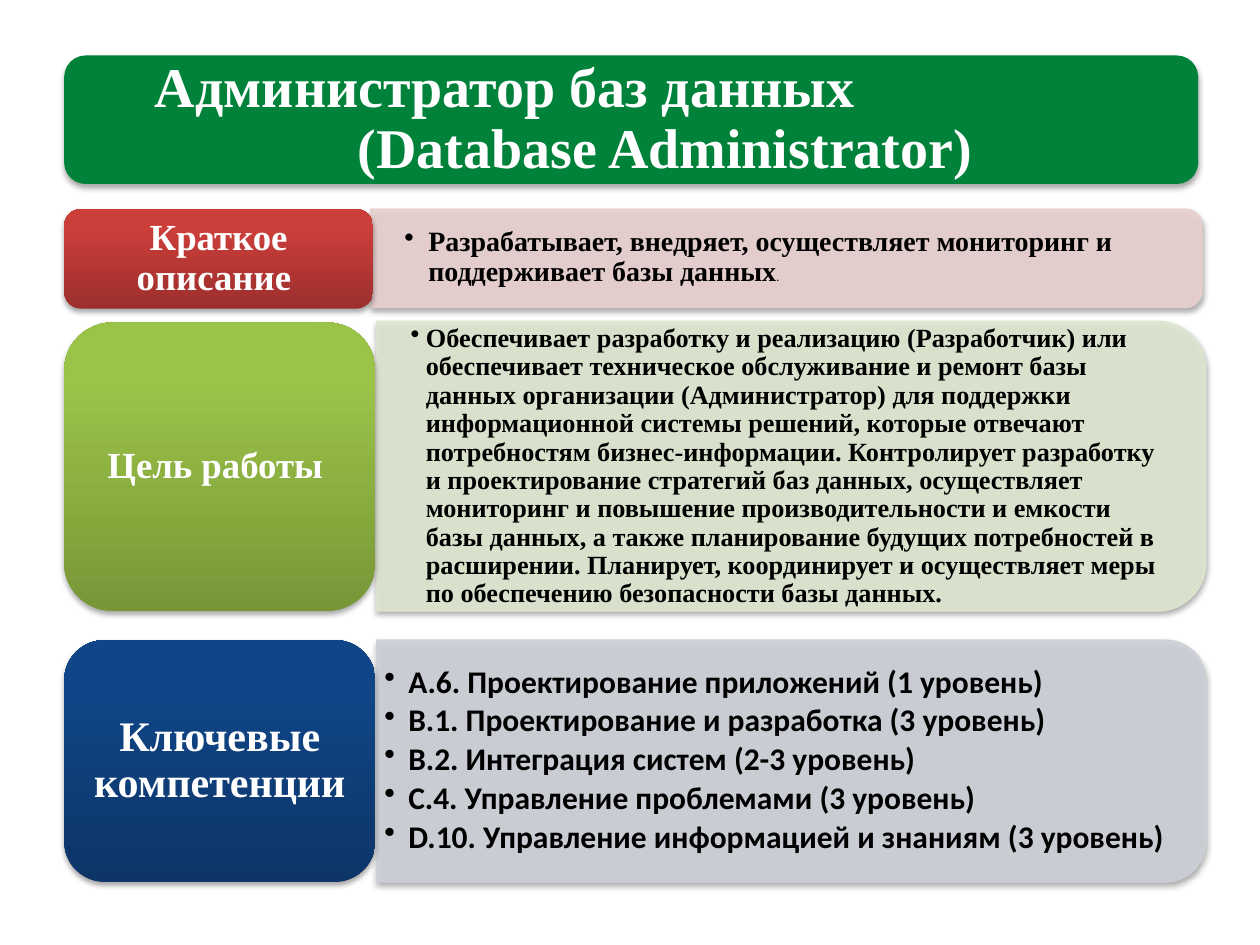
from lxml import etree
from pptx import Presentation
from pptx.dml.color import RGBColor
from pptx.enum.shapes import MSO_SHAPE
from pptx.enum.text import MSO_ANCHOR, MSO_AUTO_SIZE, PP_ALIGN
from pptx.oxml.ns import qn
from pptx.util import Inches, Pt

COLORS = {"banner": "00823B", "white": "FFFFFF", "black": "000000"}
SERIF, SANS = "Times New Roman", "Calibri"

# Each row: label and panel boxes (left, top, width, height), their colours and text
ROWS = [
    {"label": "Краткое описание ", "label_size": 21,
     "label_box": (0.51, 1.66, 2.45, 0.79), "gradient": ("9C2F2D", "CB3E3A"),
     "panel_box": (2.94, 1.66, 6.6, 0.78), "panel": "E8D0D0",
     "text_box": (2.94, 1.69, 6.56, 0.71), "inset": (0.27, 0.14),
     "font": SERIF, "size": 16, "hang": 0.19,
     "items": ["Разрабатывает, внедряет, осуществляет мониторинг и "
               "поддерживает базы данных"]},
    {"label": "Цель работы ", "label_size": 21,
     "label_box": (0.51, 2.56, 2.47, 2.29), "gradient": ("779737", "9BC348"),
     "panel_box": (2.99, 2.55, 6.58, 2.3), "panel": "DEE7D1",
     "text_box": (2.99, 2.67, 6.47, 2.07), "inset": (0.27, 0.14),
     "font": SERIF, "size": 15, "hang": 0.12,
     "items": ["Обеспечивает разработку и реализацию (Разработчик) или "
               "обеспечивает техническое обслуживание и ремонт базы данных "
               "организации (Администратор) для поддержки информационной "
               "системы решений, которые отвечают потребностям "
               "бизнес-информации. Контролирует разработку и проектирование "
               "стратегий баз данных, осуществляет мониторинг и повышение "
               "производительности и емкости базы данных, а также "
               "планирование будущих потребностей в расширении. Планирует, "
               "координирует и осуществляет меры по обеспечению безопасности "
               "базы данных."]},
    {"label": "Ключевые компетенции", "label_size": 24,
     "label_box": (0.51, 5.08, 2.47, 1.92), "gradient": ("0D3568", "104587"),
     "panel_box": (2.99, 5.08, 6.58, 1.92), "panel": "CDD0D7",
     "text_box": (2.98, 5.17, 6.49, 1.73), "inset": (0.07, 0.04),
     "font": SANS, "size": 18, "hang": 0.19,
     "items": ["А.6. Проектирование приложений (1 уровень)",
               "В.1. Проектирование и разработка (3 уровень)",
               "В.2. Интеграция систем (2-3 уровень)",
               "С.4. Управление проблемами (3 уровень)",
               "D.10. Управление информацией и знаниям (3 уровень)"]},
]


def add_shadow(sp):
    """Give a shape, already filled and outlined, a soft shadow below it."""
    sp.shadow.inherit = False
    effects = sp._element.spPr.find(qn("a:effectLst"))
    shadow = etree.SubElement(effects, qn("a:outerShdw"), blurRad="40000",
                              dist="23000", dir="5400000", rotWithShape="0")
    color = etree.SubElement(shadow, qn("a:srgbClr"), val=COLORS["black"])
    etree.SubElement(color, qn("a:alpha"), val="35000")


def format_text(tf, inset, font, size, color, align):
    tf.word_wrap = True
    tf.auto_size = MSO_AUTO_SIZE.NONE
    tf.vertical_anchor = MSO_ANCHOR.MIDDLE
    tf.margin_left = tf.margin_right = Inches(inset[0])
    tf.margin_top = tf.margin_bottom = Inches(inset[1])
    for p in tf.paragraphs:
        p.alignment = align
        p.line_spacing = 0.9
        p.space_before = Pt(0)
        for r in p.runs:
            r.font.name, r.font.size, r.font.bold = font, Pt(size), True
            r.font.color.rgb = RGBColor.from_string(COLORS[color])


prs = Presentation()
prs.slide_width, prs.slide_height = Inches(10), Inches(7.5)
s = prs.slides.add_slide(prs.slide_layouts[5])

# Banner with the title on top of it
banner = s.shapes.add_shape(MSO_SHAPE.ROUNDED_RECTANGLE, Inches(0.51),
                            Inches(0.44), Inches(9), Inches(1.02))
banner.fill.solid()
banner.fill.fore_color.rgb = RGBColor.from_string(COLORS["banner"])
banner.line.fill.background()
add_shadow(banner)

title = s.shapes.title
title.left, title.top = Inches(0.56), Inches(0.49)
title.width, title.height = Inches(8.9), Inches(0.92)
title.text_frame.text = "Администратор баз данных\n(Database Administrator)"
format_text(title.text_frame, (0.13, 0.13), SERIF, 32, "white", PP_ALIGN.CENTER)
first_line = title.text_frame.paragraphs[0]
first_line.alignment = PP_ALIGN.LEFT
first_line._p.get_or_add_pPr().set("marL", str(Inches(0.54)))
s.shapes._spTree.append(title._element)

for row in ROWS:
    # Panel: rounded on the right, so a top-rounded shape turned by 90 degrees
    x, y, w, h = row["panel_box"]
    panel = s.shapes.add_shape(MSO_SHAPE.ROUND_2_SAME_RECTANGLE,
                               Inches(x + (w - h) / 2), Inches(y + (h - w) / 2),
                               Inches(h), Inches(w))
    panel.rotation = 90
    panel.fill.solid()
    panel.line.fill.solid()
    panel.line.width = Pt(0.75)
    for paint in (panel.fill.fore_color, panel.line.color):
        paint.rgb = RGBColor.from_string(row["panel"])
    for color in panel._element.spPr.iter(qn("a:srgbClr")):
        etree.SubElement(color, qn("a:alpha"), val="90000")
    add_shadow(panel)

    # Bulleted text
    body = s.shapes.add_textbox(*map(Inches, row["text_box"]))
    tf = body.text_frame
    tf.text = "\n".join(row["items"])
    format_text(tf, row["inset"], row["font"], row["size"], "black", PP_ALIGN.LEFT)
    for p in tf.paragraphs:
        p.space_after = Pt(row["size"] * 0.15)
        pPr = p._p.get_or_add_pPr()
        pPr.set("marL", str(Inches(row["hang"])))
        pPr.set("indent", str(-Inches(row["hang"])))
        etree.SubElement(pPr, qn("a:buChar"), char="•")
    if row is ROWS[0]:
        r = tf.paragraphs[0].add_run()
        r.text = "."
        r.font.name, r.font.size, r.font.bold = SANS, Pt(7), False

    # Label
    label = s.shapes.add_shape(MSO_SHAPE.ROUNDED_RECTANGLE,
                               *map(Inches, row["label_box"]))
    label.fill.gradient()
    label.fill.gradient_angle = 90
    for stop, position, color in zip(label.fill.gradient_stops, (0, 0.8),
                                     row["gradient"]):
        stop.position = position
        stop.color.rgb = RGBColor.from_string(color)
    label.line.fill.background()
    add_shadow(label)
    label.text_frame.text = row["label"]
    format_text(label.text_frame, (0.09, 0.04), SERIF, row["label_size"],
                "white", PP_ALIGN.CENTER)

prs.save("out.pptx")
